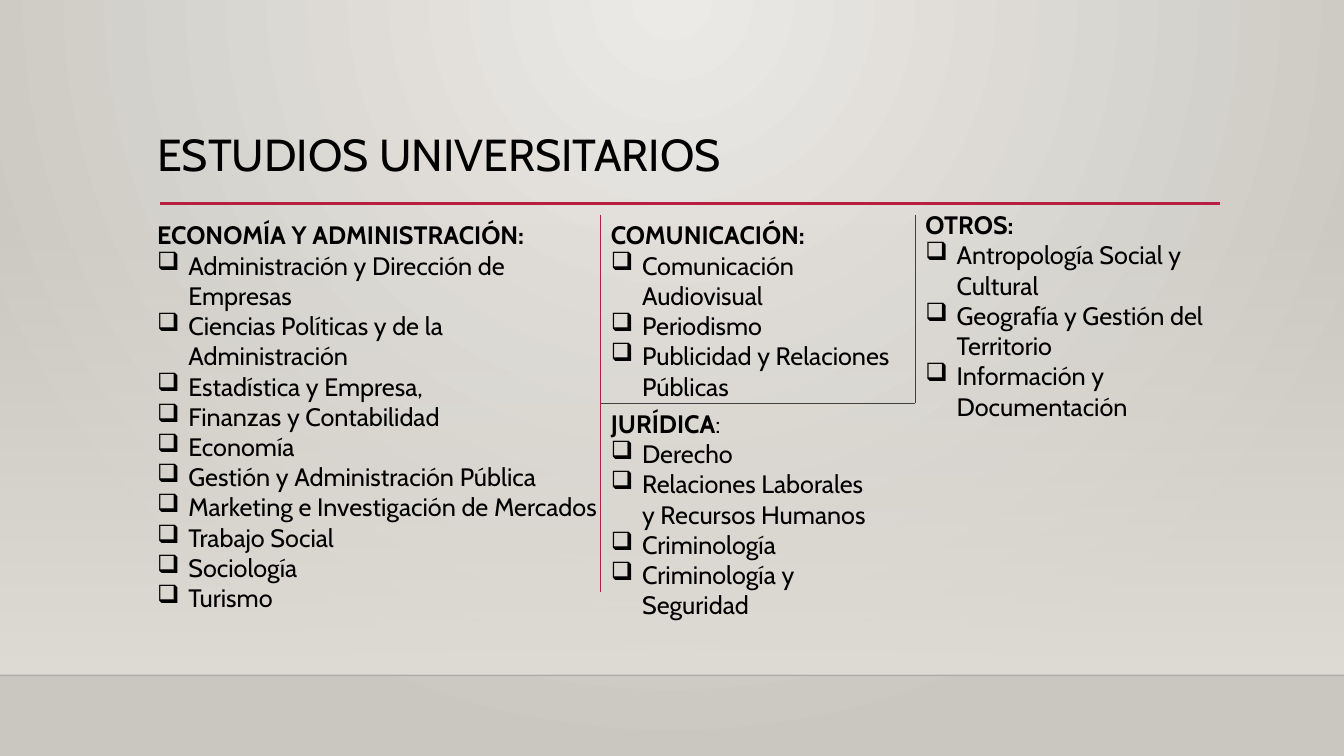
"""Build the slide listing university studies by field."""
from lxml import etree
from pptx import Presentation
from pptx.dml.color import RGBColor
from pptx.enum.shapes import MSO_CONNECTOR, MSO_SHAPE
from pptx.oxml import parse_xml
from pptx.oxml.ns import nsdecls, qn
from pptx.util import Inches, Pt

STRAIGHT = MSO_CONNECTOR.STRAIGHT
RECTANGLE = MSO_SHAPE.RECTANGLE
FONT = "Cabin"
BULLET = "❑"
COLORS = {
    "text": "000000",
    "accent": "B71E42",
    "divider": "404040",
    "floor": "000001",
    "panel": "DFDBD5",
    "glow": "ECEAE7",
    "edge": "CAC7C1",
}
WIDTH, HEIGHT = 13.33, 7.5
LEFT, MIDDLE, RIGHT = 1.46, 5.96, 9.08
TOP, SPLIT, BOTTOM, FLOOR = 2.13, 4.0, 5.87, 6.7

STUDIES = [
    ((LEFT, TOP, 4.61, 3.74), "ECONOMÍA Y ADMINISTRACIÓN", True, [
        "Administración y Dirección de Empresas",
        "Ciencias Políticas y de la Administración",
        "Estadística y Empresa,",
        "Finanzas y Contabilidad",
        "Economía",
        "Gestión y Administración Pública",
        "Marketing e Investigación de Mercados",
        "Trabajo Social",
        "Sociología",
        "Turismo",
    ]),
    ((MIDDLE, TOP, 3.12, 1.92), "COMUNICACIÓN", True, [
        "Comunicación Audiovisual",
        "Periodismo",
        "Publicidad y Relaciones Públicas",
    ]),
    ((MIDDLE, SPLIT, 2.85, 2.52), "JURÍDICA", False, [
        "Derecho",
        "Relaciones Laborales y Recursos Humanos",
        "Criminología",
        "Criminología y Seguridad",
    ]),
    ((RIGHT, 2.03, 3.41, 2.83), "OTROS", True, [
        "Antropología Social y Cultural",
        "Geografía y Gestión del Territorio",
        "Información y Documentación",
    ]),
]


def gradient(start, end, direction, start_alpha=100):
    """Return a two-stop gradient fill element."""
    return parse_xml(
        f'<a:gradFill {nsdecls("a")} rotWithShape="1"><a:gsLst>'
        f'<a:gs pos="0"><a:srgbClr val="{COLORS[start]}">'
        f'<a:alpha val="{start_alpha * 1000}"/></a:srgbClr></a:gs>'
        f'<a:gs pos="100000"><a:srgbClr val="{COLORS[end]}"/></a:gs>'
        f'</a:gsLst>{direction}</a:gradFill>'
    )


def set_background(slide):
    """Give the slide a glow that spreads from the top centre."""
    direction = ('<a:path path="circle"><a:fillToRect l="43000" t="0" '
                 'r="43000" b="100000"/></a:path>')
    background = parse_xml(f'<p:bg {nsdecls("p", "a")}><p:bgPr><a:effectLst/></p:bgPr></p:bg>')
    background[0].insert(0, gradient("glow", "edge", direction))
    slide.element.cSld.insert(0, background)


def add_wall(slide):
    """Add the panel that fades in towards the floor line."""
    wall = slide.shapes.add_shape(
        RECTANGLE, 0, Inches(2.21), Inches(WIDTH), Inches(FLOOR - 2.21))
    wall.shadow.inherit = False
    wall.line.fill.background()
    fade = gradient("panel", "panel", '<a:lin ang="5400000" scaled="0"/>', 0)
    wall.element.spPr.find(qn("a:prstGeom")).addnext(fade)


def add_rule(slide, start, end, color, weight, alpha=100):
    """Add a straight line between two points."""
    rule = slide.shapes.add_connector(STRAIGHT, *map(Inches, start + end))
    rule.line.width = Pt(weight)
    rule.line.color.rgb = RGBColor.from_string(COLORS[color])
    properties = rule.element.spPr
    if alpha < 100:
        tint = next(properties.iter(qn("a:srgbClr")))
        etree.SubElement(tint, qn("a:alpha")).set("val", str(alpha * 1000))
    etree.SubElement(properties, qn("a:effectLst"))


def add_text_frame(slide, area):
    """Add a wrapping text box and return its frame."""
    frame = slide.shapes.add_textbox(*map(Inches, area)).text_frame
    frame.word_wrap = True
    return frame


def set_font(paragraph, size, bold=None):
    """Set the common text style of a paragraph."""
    font = paragraph.font
    font.name, font.size, font.bold = FONT, Pt(size), bold
    font.color.rgb = RGBColor.from_string(COLORS["text"])


def add_title(slide, text):
    """Add the slide title."""
    title = add_text_frame(slide, (LEFT, 1.27, 10.5, 0.75)).paragraphs[0]
    title.text = text
    title.line_spacing = 0.9
    set_font(title, 32)


def add_bullet(paragraph):
    """Give a paragraph a box bullet with a hanging indent."""
    properties = paragraph._p.get_or_add_pPr()
    properties.set("marL", str(Inches(0.31)))
    properties.set("indent", str(Inches(-0.31)))
    etree.SubElement(properties, qn("a:buChar")).set("char", BULLET)


def add_studies(slide, area, field, bold_colon, degrees):
    """Add a field heading with its list of degrees."""
    frame = add_text_frame(slide, area)
    heading = frame.paragraphs[0]
    set_font(heading, 18)
    for text, bold in ((field, True), (":", bold_colon)):
        run = heading.add_run()
        run.text = text
        run.font.bold = bold
    for degree in degrees:
        item = frame.add_paragraph()
        item.text = degree
        add_bullet(item)
        set_font(item, 18)


def main():
    """Build and save the slide."""
    deck = Presentation()
    deck.slide_width, deck.slide_height = Inches(WIDTH), Inches(HEIGHT)
    slide = deck.slides.add_slide(deck.slide_layouts[6])
    set_background(slide)
    add_wall(slide)
    add_rule(slide, (0, FLOOR), (WIDTH, FLOOR), "floor", 1, 20)
    add_rule(slide, (1.59, 2.02), (12.1, 2.02), "accent", 2.5)
    add_title(slide, "ESTUDIOS UNIVERSITARIOS")
    for studies in STUDIES:
        add_studies(slide, *studies)
    add_rule(slide, (MIDDLE, SPLIT), (RIGHT, SPLIT), "divider", 0.75)
    add_rule(slide, (MIDDLE, TOP), (MIDDLE, BOTTOM), "accent", 0.75)
    add_rule(slide, (RIGHT, TOP), (RIGHT, SPLIT), "divider", 0.75)
    deck.save("out.pptx")


if __name__ == "__main__":
    main()
